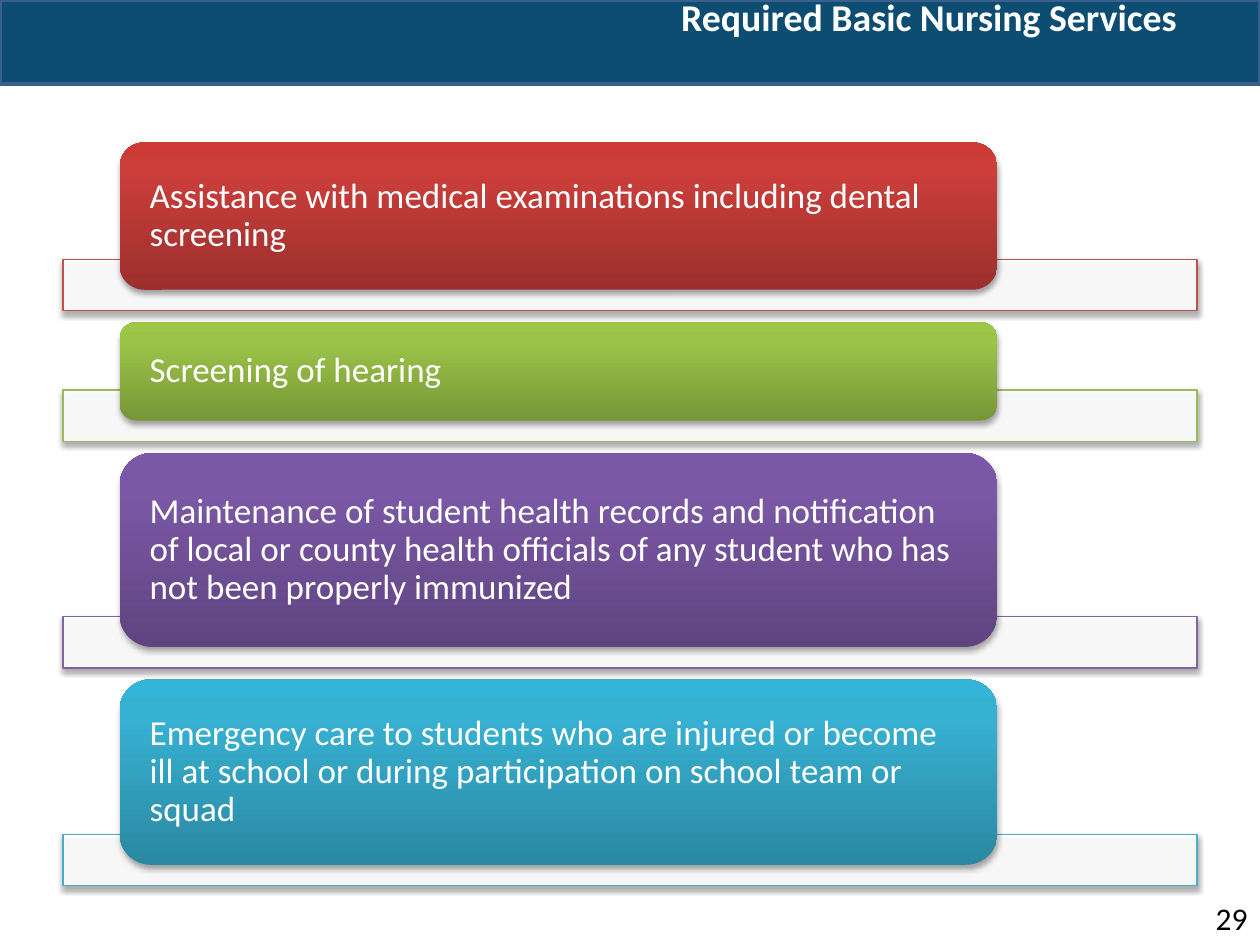
from dataclasses import dataclass

from lxml.etree import SubElement
from pptx import Presentation
from pptx.dml.color import RGBColor as RGB
from pptx.enum.shapes import MSO_SHAPE as SHAPE
from pptx.enum.text import MSO_ANCHOR as ANCHOR, MSO_AUTO_SIZE as AUTO, PP_ALIGN as ALIGN
from pptx.oxml.ns import qn
from pptx.util import Pt


@dataclass(frozen=True)
class Theme:
    font: str = "Calibri"
    white: str = "FFFFFF"
    black: str = "000000"
    header: str = "0E4D72"
    header_line: str = "3A5F8C"
    title_size: float = 21.6
    body_size: float = 20
    number_size: float = 18


# text, box height, bar outline, gradient from bottom to top
SERVICES = [
    ("Assistance with medical examinations including dental screening",
     84.2, "C0504D", ("9C2F2D", "CB3E3A", "CE3B37")),
    ("Screening of hearing",
     56.1, "9BBB59", ("779737", "9BC348", "9DC746")),
    ("Maintenance of student health records and notification of local or county "
     "health officials of any student who has not been properly immunized",
     110.8, "8064A2", ("5F4480", "7B58A6", "7C57A8")),
    ("Emergency care to students who are injured or become ill at school or during "
     "participation on school team or squad",
     105.9, "4BACC6", ("2A88A2", "37B1D2", "34B4D6")),
]
STOPS = (0, 80, 100)
BAR_HEIGHT, OVERLAP, GAP = 29.5, 17.5, 6.6
CORNER = 0.16667


class Builder:
    def __init__(self, slide, theme):
        self.slide, self.theme = slide, theme

    def set_font(self, p, size, color, bold=False):
        f = p.font
        f.name, f.size, f.bold = self.theme.font, Pt(size), bold
        f.color.rgb = RGB.from_string(color)

    def shape(self, kind, x, y, w, h, fill=None, line=None, line_width=0.75):
        sp = self.slide.shapes.add_shape(kind, Pt(x), Pt(y), Pt(w), Pt(h))
        if fill:
            sp.fill.solid()
            sp.fill.fore_color.rgb = RGB.from_string(fill)
        if line:
            sp.line.color.rgb = RGB.from_string(line)
            sp.line.width = Pt(line_width)
        else:
            sp.line.fill.background()
        sp.shadow.inherit = False
        return sp

    def add_shadow(self, sp):
        effects = sp._element.spPr.find(qn("a:effectLst"))
        outer = SubElement(effects, qn("a:outerShdw"), blurRad="40000", dist="23000",
                           dir="5400000", rotWithShape="0")
        color = SubElement(outer, qn("a:srgbClr"), val=self.theme.black)
        SubElement(color, qn("a:alpha"), val="35000")

    def header(self, width, height):
        bar = self.shape(SHAPE.RECTANGLE, 0, 0, width, height,
                         self.theme.header, self.theme.header_line, 2)
        # Index 2 is the back of the shape tree, behind the title
        self.slide.shapes._spTree.insert(2, bar._element)

    def title(self, text, x, y, w, h):
        sp = self.slide.shapes.title
        sp.left, sp.top, sp.width, sp.height = Pt(x), Pt(y), Pt(w), Pt(h)
        tf = sp.text_frame
        tf.auto_size, tf.vertical_anchor = AUTO.NONE, ANCHOR.MIDDLE
        p = tf.paragraphs[0]
        p.alignment = ALIGN.CENTER
        self.set_font(p, self.theme.title_size, self.theme.white, True)
        p.add_run().text = text
        p.add_line_break()

    def bar(self, y, line):
        sp = self.shape(SHAPE.RECTANGLE, 36, y, 648, BAR_HEIGHT, self.theme.white, line)
        color = sp._element.spPr.find(qn("a:solidFill")).find(qn("a:srgbClr"))
        SubElement(color, qn("a:alpha"), val="90000")
        self.add_shadow(sp)

    def box(self, text, y, height, colors):
        sp = self.shape(SHAPE.ROUNDED_RECTANGLE, 68.4, y, 501.5, height)
        sp.adjustments[0] = CORNER
        sp.fill.gradient()
        sp.fill.gradient_angle = 90
        stops = sp._element.spPr.find(qn("a:gradFill")).find(qn("a:gsLst"))
        stops.clear()
        for pos, color in zip(STOPS, colors):
            stop = SubElement(stops, qn("a:gs"), pos=str(pos * 1000))
            SubElement(stop, qn("a:srgbClr"), val=color)
        self.add_shadow(sp)

        tf = sp.text_frame
        tf.word_wrap, tf.vertical_anchor = True, ANCHOR.MIDDLE
        # The rounded corners already inset the text area by 29% of their radius
        tf.margin_left = tf.margin_right = Pt(17.1 - 0.29 * CORNER * height)
        tf.margin_top = tf.margin_bottom = 0
        p = tf.paragraphs[0]
        p.alignment, p.line_spacing = ALIGN.LEFT, 0.9
        self.set_font(p, self.theme.body_size, self.theme.white)
        p.add_run().text = text

    def page_number(self, text, x, y, w, h):
        tf = self.slide.shapes.add_textbox(Pt(x), Pt(y), Pt(w), Pt(h)).text_frame
        tf.word_wrap = True
        p = tf.paragraphs[0]
        p.alignment = ALIGN.RIGHT
        self.set_font(p, self.theme.number_size, self.theme.black)
        p.add_run().text = text


def main():
    prs = Presentation()
    prs.slide_width, prs.slide_height = Pt(720), Pt(540)
    b = Builder(prs.slides.add_slide(prs.slide_layouts[5]), Theme())

    b.header(720, 48)
    b.title("Required Basic Nursing Services", 342, 0, 378, 44.6)
    y = 81.4
    for text, height, line, colors in SERVICES:
        bar_top = y + height - OVERLAP
        b.bar(bar_top, line)
        b.box(text, y, height, colors)
        y = bar_top + BAR_HEIGHT + GAP
    b.page_number("29", 672, 510, 48, 29)
    prs.save("out.pptx")


if __name__ == "__main__":
    main()
